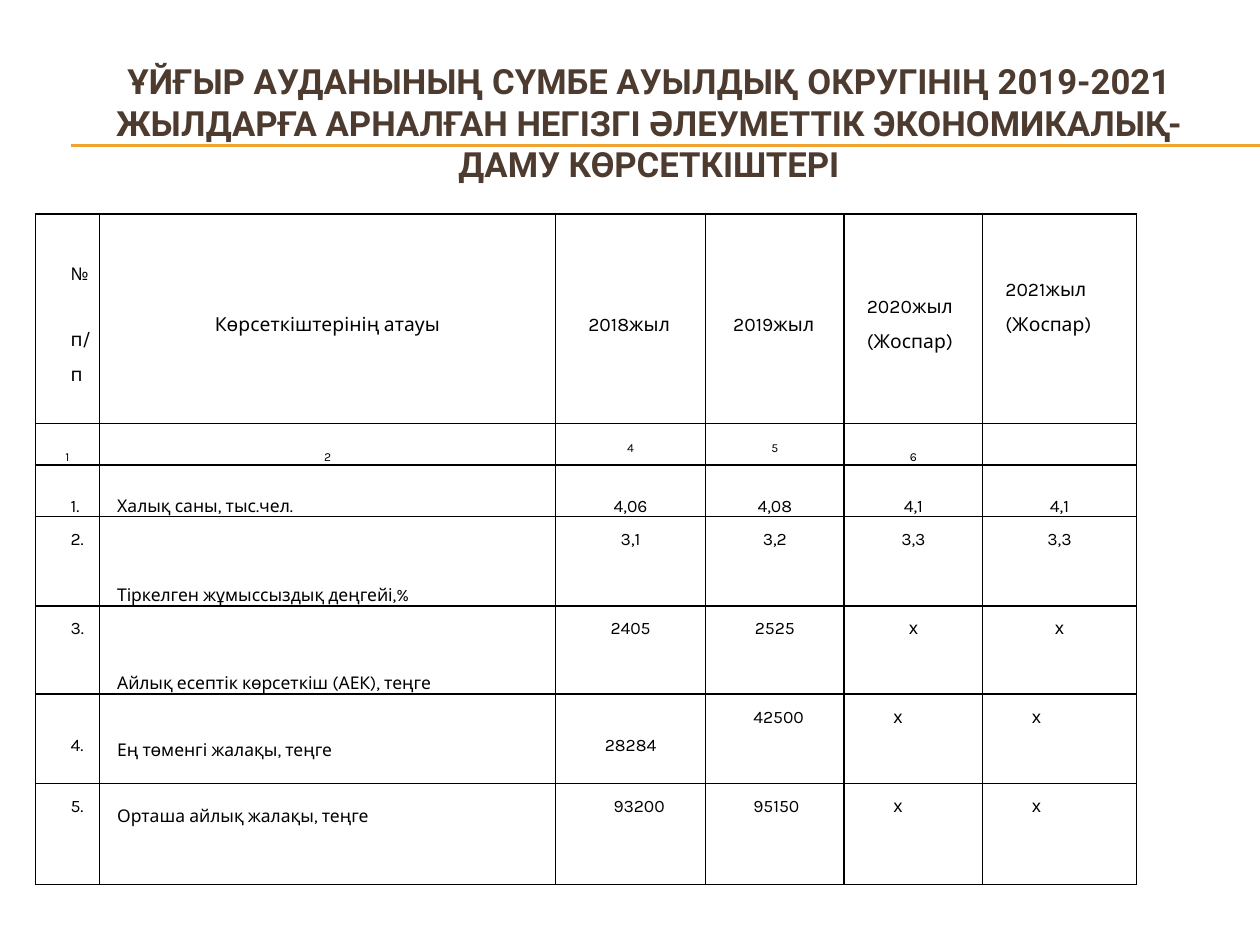
"""Build the slide of main socio-economic indicators for the Sumbe rural district."""
from lxml.etree import SubElement
from pptx import Presentation
from pptx.dml.color import RGBColor
from pptx.enum.text import MSO_ANCHOR, MSO_AUTO_SIZE, PP_ALIGN
from pptx.oxml.ns import qn
from pptx.util import Inches, Pt

WHITE = RGBColor(0xFF, 0xFF, 0xFF)
BLACK = RGBColor(0x00, 0x00, 0x00)
BROWN = RGBColor(0x4E, 0x3B, 0x30)
AMBER = RGBColor(0xF0, 0xA2, 0x2E)
TOP, MIDDLE, BOTTOM = MSO_ANCHOR.TOP, MSO_ANCHOR.MIDDLE, MSO_ANCHOR.BOTTOM

COLUMN_WIDTHS = [0.51, 3.62, 1.19, 1.1, 1.1, 1.22]
ROW_HEIGHTS = [1.66, 0.33, 0.41, 0.71, 0.7, 0.71, 0.8]
TEXTS = [
    ["№\nп/п", "Көрсеткіштерінің атауы", "2018жыл", "2019жыл", "2020жыл (Жоспар)", "2021жыл (Жоспар)"],
    ["1", "2", "4", "5", "6", ""],
    ["1.", "Халық саны, тыс.чел.", "4,06", "4,08", "4,1", "4,1"],
    ["2.", "Тіркелген жұмыссыздық деңгейі,%", "3,1", "3,2", "3,3", "3,3"],
    ["3.", "Айлық есептік көрсеткіш (АЕК), теңге", "2405", "2525", "х", "х"],
    ["4.", "Ең төменгі жалақы, теңге", "28284", "42500", "х", "х"],
    ["5.", "Орташа айлық жалақы, теңге", "93200", "95150", "х", "х"],
]
INDENTS = [
    [0.28, None, 0.26, 0.22, 0.18, 0.18],
    [None] * 6,
    *[[0.28, 0.14] + [None] * 4] * 3,
    [0.28, 0.14, None, 0.38, 0.39, 0.39],
    [0.28, 0.14, 0.46, 0.38, 0.39, 0.39],
]
ANCHORS = [
    [MIDDLE] * 6,
    [BOTTOM, BOTTOM, MIDDLE, MIDDLE, BOTTOM, BOTTOM],
    [BOTTOM] * 6,
    *[[TOP, BOTTOM] + [TOP] * 4] * 2,
    [MIDDLE] * 3 + [TOP] * 3,
    [TOP] * 6,
]
FONT_SIZES = [11, 7] + [10] * 5
LINE_SPACINGS = [20, 13] + [19] * 5
TALL_NAME_ROWS = range(3, 7)


def add_text(paragraph, text, font_name, size, color, bold=False):
    run = paragraph.add_run()
    run.text = text
    run.font.name, run.font.size, run.font.bold = font_name, Pt(size), bold
    run.font.color.rgb = color


def add_borders(cell):
    properties = cell._tc.get_or_add_tcPr()
    for position, side in enumerate(("lnL", "lnR", "lnT", "lnB")):
        border = properties.makeelement(qn(f"a:{side}"), {"w": str(Pt(1))})
        color = SubElement(SubElement(border, qn("a:solidFill")), qn("a:srgbClr"))
        color.set("val", str(BLACK))
        properties.insert(position, border)


presentation = Presentation()
presentation.slide_width, presentation.slide_height = Inches(10), Inches(7.5)
slide = presentation.slides.add_slide(presentation.slide_layouts[5])

for rule_y in (1.15, 1.16):
    rule = slide.shapes.add_connector(1, Inches(0.56), Inches(rule_y), Inches(10), Inches(rule_y))
    rule.line.color.rgb, rule.line.width = AMBER, Pt(0.75)
    SubElement(rule._element.spPr, qn("a:effectLst"))

title = slide.shapes.title
title.left, title.top, title.width, title.height = map(Inches, (0.47, 0.5, 9.36, 1.45))
heading = title.text_frame
heading.word_wrap, heading.auto_size = True, MSO_AUTO_SIZE.NONE
heading.vertical_anchor, heading.margin_bottom = MIDDLE, Inches(0.56)
heading.paragraphs[0].alignment = PP_ALIGN.CENTER
add_text(
    heading.paragraphs[0],
    "ҰЙҒЫР АУДАНЫНЫҢ СҮМБЕ АУЫЛДЫҚ ОКРУГІНІҢ 2019-2021 ЖЫЛДАРҒА АРНАЛҒАН "
    "НЕГІЗГІ ӘЛЕУМЕТТІК ЭКОНОМИКАЛЫҚ-ДАМУ КӨРСЕТКІШТЕРІ",
    "Roboto", 19.8, BROWN, True,
)
slide.shapes._spTree.append(title._element)

indicators = slide.shapes.add_table(
    len(ROW_HEIGHTS), len(COLUMN_WIDTHS), Inches(0.28), Inches(1.7),
    Inches(sum(COLUMN_WIDTHS)), Inches(sum(ROW_HEIGHTS)),
).table
for column, width in zip(indicators.columns, COLUMN_WIDTHS):
    column.width = Inches(width)
for row, height in zip(indicators.rows, ROW_HEIGHTS):
    row.height = Inches(height)

for r, row_texts in enumerate(TEXTS):
    for c, text in enumerate(row_texts):
        cell = indicators.cell(r, c)
        cell.fill.solid()
        cell.fill.fore_color.rgb = WHITE
        add_borders(cell)
        cell.margin_left = cell.margin_right = cell.margin_top = cell.margin_bottom = 0
        cell.vertical_anchor = ANCHORS[r][c]
        spacing = 25 if c == 1 and r in TALL_NAME_ROWS else LINE_SPACINGS[r]
        for p, line in enumerate(text.split("\n")):
            paragraph = cell.text_frame.paragraphs[0] if p == 0 else cell.text_frame.add_paragraph()
            paragraph.line_spacing = Pt(spacing)
            if INDENTS[r][c] is None:
                paragraph.alignment = PP_ALIGN.CENTER
            else:
                paragraph._p.get_or_add_pPr().set("marL", str(Inches(INDENTS[r][c])))
            if line:
                add_text(paragraph, line, "Karla", 10 if line == "№" else FONT_SIZES[r], BLACK)

number_sign, number_word = indicators.cell(0, 0).text_frame.paragraphs
number_sign.line_spacing = Pt(19)
number_sign.space_after = number_word.space_before = Pt(9)
indicators.cell(0, 5).margin_bottom = Pt(20)

presentation.save("out.pptx")
